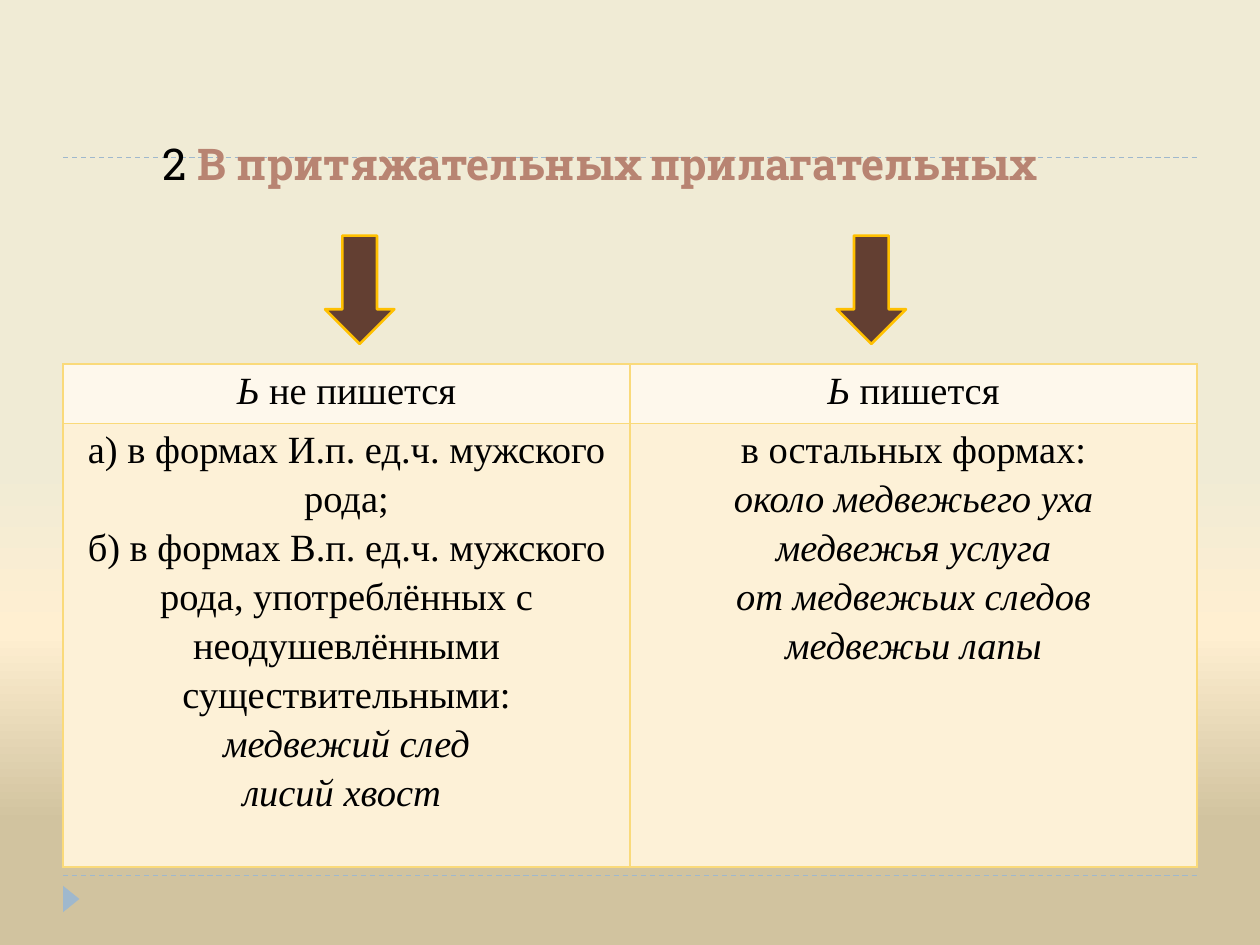
from copy import deepcopy

from lxml.etree import SubElement
from pptx import Presentation
from pptx.dml.color import RGBColor
from pptx.enum.dml import MSO_LINE_DASH_STYLE as Dash
from pptx.enum.shapes import MSO_CONNECTOR, MSO_SHAPE
from pptx.enum.text import MSO_ANCHOR, PP_ALIGN
from pptx.oxml.ns import qn
from pptx.util import Inches, Pt

BLACK = RGBColor(0x00, 0x00, 0x00)
ROSE = RGBColor(0xB8, 0x84, 0x72)
BLUE = RGBColor(0x9F, 0xB8, 0xCD)
BROWN = RGBColor(0x63, 0x3F, 0x32)
GOLD = RGBColor(0xFF, 0xC0, 0x00)
BORDER = RGBColor(0xFA, 0xDA, 0x7A)
ROW_FILLS = (RGBColor(0xFE, 0xF8, 0xEC), RGBColor(0xFD, 0xF1, 0xD7))
BACKGROUND = (
    (0.49, RGBColor(0xF0, 0xEB, 0xD5)),
    (0.67, RGBColor(0xFF, 0xEF, 0xD1)),
    (0.87, RGBColor(0xD1, 0xC3, 0x9F)),
)

# Content: a paragraph is a list of (text, font values)
TITLE_FONT = {"name": "Roboto Slab", "size": Pt(25)}
TABLE_FONT = {"name": "Times New Roman", "size": Pt(22)}
PLAIN, ITALIC = {"italic": False}, {"italic": True}
TITLE = [("2 ", {"color": BLACK}),
         ("В притяжательных прилагательных", {"color": ROSE, "bold": True})]
ROWS = [
    [
        [[("Ь ", ITALIC), ("не пишется", PLAIN)]],
        [[("Ь", ITALIC), (" пишется", PLAIN)]],
    ],
    [
        [
            [("а) в формах И.п. ед.ч. мужского рода;", PLAIN)],
            [("б) в формах В.п. ед.ч. мужского рода, употреблённых "
              "с неодушевлёнными существительными:", PLAIN)],
            [("медвежий след", ITALIC)],
            [("лисий хвост ", ITALIC)],
        ],
        [
            [("в остальных формах:", PLAIN)],
            [("около медвежьего уха", ITALIC)],
            [("медвежья услуга", ITALIC)],
            [("от медвежьих следов", ITALIC)],
            [("медвежьи лапы", ITALIC)],
        ],
    ],
]
LEFT, WIDTH = 0.5, 9
ROW_HEIGHTS = (0.47, 3.52)
RULE_TOPS = (6.95, 1.25)
ARROW_LEFTS = (2.58, 6.64)


def write_paragraph(paragraph, runs, base_font):
    paragraph.alignment = PP_ALIGN.CENTER
    for text, values in runs:
        run = paragraph.add_run()
        run.text = text
        for name, value in {"color": BLACK, **base_font, **values}.items():
            if name == "color":
                run.font.color.rgb = value
            else:
                setattr(run.font, name, value)


def add_shape(shapes, kind, box, fill):
    shape = shapes.add_shape(kind, *map(Inches, box))
    shape.shadow.inherit = False
    shape.fill.solid()
    shape.fill.fore_color.rgb = fill
    shape.line.fill.background()
    return shape


def set_borders(cell, color, width):
    properties = cell._tc.get_or_add_tcPr()
    for position, side in enumerate(("lnL", "lnR", "lnT", "lnB")):
        line = SubElement(properties, qn(f"a:{side}"), w=str(width))
        fill = SubElement(line, qn("a:solidFill"))
        SubElement(fill, qn("a:srgbClr"), val=str(color))
        properties.insert(position, line)


presentation = Presentation()
presentation.slide_width, presentation.slide_height = Inches(10), Inches(7.5)
slide = presentation.slides.add_slide(presentation.slide_layouts[6])
shapes = slide.shapes

# Background gradient, top to bottom
fill = slide.background.fill
fill.gradient()
fill.gradient_angle = 270
stop_list = next(slide.element.iter(qn("a:gsLst")))
stop_list.append(deepcopy(stop_list[0]))
for stop, (position, color) in zip(fill.gradient_stops, BACKGROUND):
    stop.position = position
    stop.color.rgb = color

# Dashed rules and corner marker
for top in RULE_TOPS:
    rule = shapes.add_connector(MSO_CONNECTOR.STRAIGHT, Inches(LEFT), Inches(top),
                                Inches(LEFT + WIDTH), Inches(top))
    rule.line.color.rgb = BLUE
    rule.line.width = Pt(0.75)
    rule.line.dash_style = Dash.DASH
    SubElement(rule._element.spPr, qn("a:effectLst"))
marker = add_shape(shapes, MSO_SHAPE.ISOSCELES_TRIANGLE, (0.46, 7.07, 0.21, 0.13), BLUE)
marker.rotation = 90

# Title
title = shapes.add_textbox(Inches(0), Inches(0.44), Inches(9.5), Inches(1.51))
frame = title.text_frame
frame.word_wrap = True
frame.vertical_anchor = MSO_ANCHOR.BOTTOM
frame.margin_bottom = Inches(0.45)
write_paragraph(frame.paragraphs[0], TITLE, TITLE_FONT)

# Table
table = shapes.add_table(len(ROWS), len(ROWS[0]), Inches(LEFT), Inches(2.89),
                         Inches(WIDTH), Inches(sum(ROW_HEIGHTS))).table
table.first_row = table.horz_banding = False
for row_index, row in enumerate(ROWS):
    table.rows[row_index].height = Inches(ROW_HEIGHTS[row_index])
    for column_index, paragraphs in enumerate(row):
        cell = table.cell(row_index, column_index)
        cell.margin_left = cell.margin_right = Inches(0.07)
        cell.margin_top = cell.margin_bottom = 0
        cell.fill.solid()
        cell.fill.fore_color.rgb = ROW_FILLS[row_index]
        set_borders(cell, BORDER, Pt(1))
        frame = cell.text_frame
        for index, runs in enumerate(paragraphs):
            paragraph = frame.add_paragraph() if index else frame.paragraphs[0]
            paragraph.line_spacing = 1.15
            write_paragraph(paragraph, runs, TABLE_FONT)

# Arrows from the title to the columns
for left in ARROW_LEFTS:
    arrow = add_shape(shapes, MSO_SHAPE.DOWN_ARROW, (left, 1.87, 0.55, 0.86), BROWN)
    arrow.line.color.rgb = GOLD
    arrow.line.width = Pt(1.5)

presentation.save("out.pptx")
